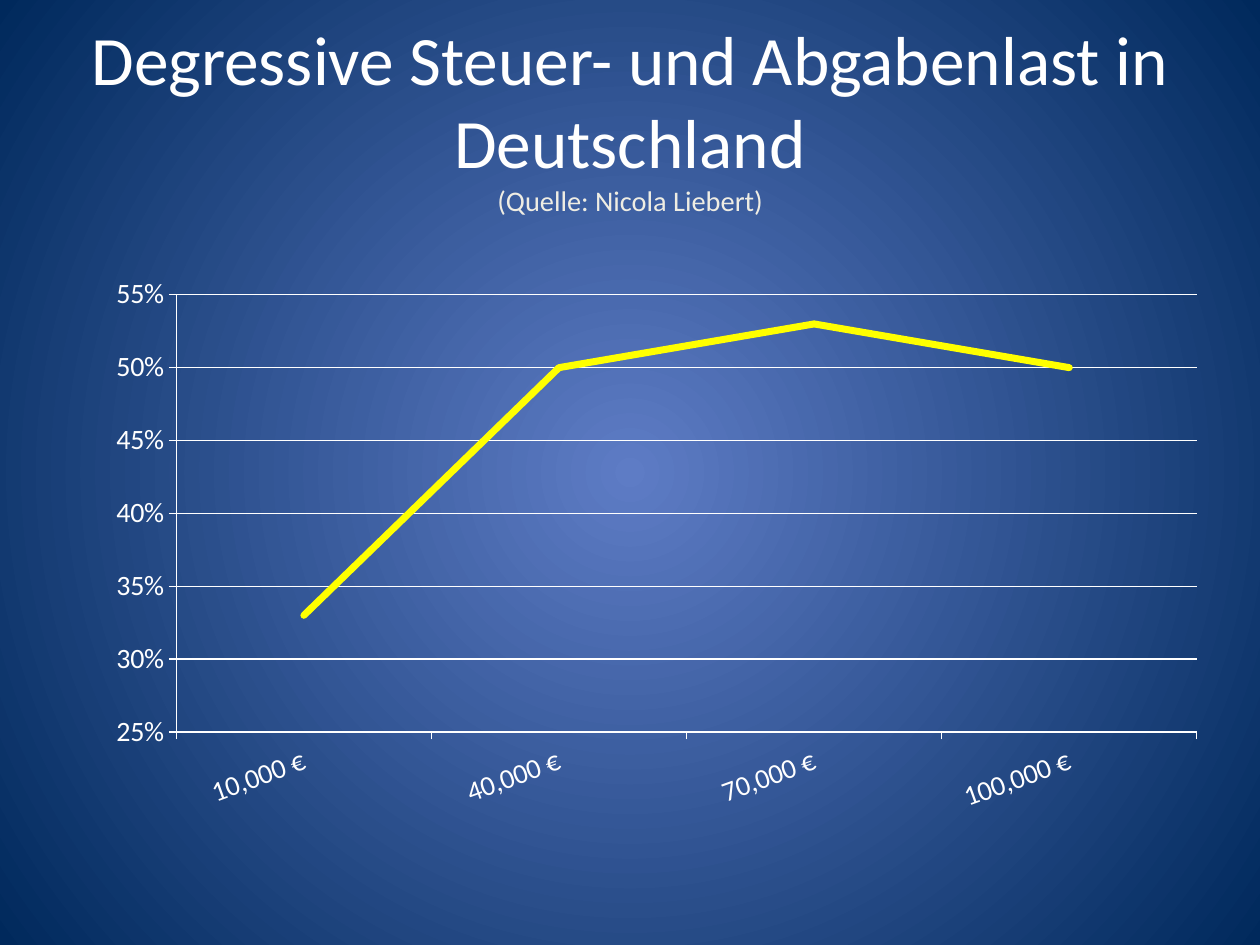
import pptx
import pptx.chart.data
import pptx.dml.color
import pptx.enum.chart
import pptx.enum.text
import pptx.oxml
import pptx.oxml.ns
import pptx.util
from dataclasses import dataclass
from typing import Any

Inches = pptx.util.Inches
Pt = pptx.util.Pt

HUES = {
    "white": "FFFFFF",
    "cream": "EFEDE3",
    "line": "FFFF00",
    "core": "5E7CC5",
    "edge": "00295C",
}
FACE = "Calibri"


@dataclass
class Part:
    text: str
    size: float
    hue: str


@dataclass
class Point:
    wage: int
    load: float


PARTS = [
    Part("Degressive Steuer- und Abgabenlast in Deutschland", 39.6, "white"),
    Part("(Quelle: Nicola Liebert)", 16.2, "cream"),
]
POINTS = [
    Point(10000, 0.33),
    Point(40000, 0.5),
    Point(70000, 0.53),
    Point(100000, 0.5),
]
WIDE, HIGH = 9.21, 4.72
PLOT = {"x": 0.89 / WIDE, "y": 0.24 / HIGH, "w": 8.1 / WIDE, "h": 3.47 / HIGH}


def tint(name: str) -> pptx.dml.color.RGBColor:
    return pptx.dml.color.RGBColor.from_string(HUES[name])


def set_font(font: Any, size: float, hue: str) -> None:
    font.name = FACE
    font.size = Pt(size)
    font.color.rgb = tint(hue)


def set_line(form: Any, hue: str, width: float) -> None:
    form.line.color.rgb = tint(hue)
    form.line.width = Pt(width)


def paint_back(slide: Any) -> None:
    fill = slide.background.fill
    fill.gradient()
    for stop, hue in zip(fill.gradient_stops, ("core", "edge")):
        stop.color.rgb = tint(hue)
    grad = slide.background._cSld.find(".//" + pptx.oxml.ns.qn("a:gradFill"))
    grad.remove(grad.find(pptx.oxml.ns.qn("a:lin")))
    grad.append(pptx.oxml.parse_xml(
        f'<a:path {pptx.oxml.ns.nsdecls("a")} path="circle">'
        '<a:fillToRect l="50000" t="50000" r="50000" b="50000"/></a:path>'))


def add_title(slide: Any, parts: list[Part]) -> None:
    title = slide.shapes.title
    title.left, title.top = Inches(0.5), Inches(0.3)
    title.width, title.height = Inches(9), Inches(1.25)
    frame = title.text_frame
    frame.auto_size = pptx.enum.text.MSO_AUTO_SIZE.NONE
    frame.vertical_anchor = pptx.enum.text.MSO_ANCHOR.MIDDLE
    para = frame.paragraphs[0]
    para.alignment = pptx.enum.text.PP_ALIGN.CENTER
    for rank, part in enumerate(parts):
        if rank:
            para.add_line_break()
        run = para.add_run()
        run.text = part.text
        set_font(run.font, part.size, part.hue)


def place_plot(chart: Any) -> None:
    area = chart._chartSpace.chart.plotArea
    for old in area.findall(pptx.oxml.ns.qn("c:layout")):
        area.remove(old)
    modes = '<c:xMode val="edge"/><c:yMode val="edge"/>'
    sides = "".join(f'<c:{key} val="{val}"/>' for key, val in PLOT.items())
    area.insert(0, pptx.oxml.parse_xml(
        f'<c:layout {pptx.oxml.ns.nsdecls("c")}><c:manualLayout>'
        f'<c:layoutTarget val="inner"/>{modes}{sides}'
        '</c:manualLayout></c:layout>'))


def style_axis(axis: Any) -> None:
    axis.major_tick_mark = pptx.enum.chart.XL_TICK_MARK.OUTSIDE
    axis.minor_tick_mark = pptx.enum.chart.XL_TICK_MARK.NONE
    set_line(axis.format, "white", 0.75)
    set_font(axis.tick_labels.font, 16, "white")


def add_graph(slide: Any, points: list[Point]) -> None:
    data = pptx.chart.data.CategoryChartData(number_format="0%")
    data.categories = [f"{point.wage:,} €" for point in points]
    data.add_series("Series 1", [point.load for point in points])
    chart = slide.shapes.add_chart(
        pptx.enum.chart.XL_CHART_TYPE.LINE,
        Inches(0.51), Inches(2.1), Inches(WIDE), Inches(HIGH), data).chart
    chart.has_legend = False
    chart.has_title = False
    set_font(chart.font, 16, "white")
    place_plot(chart)

    style_axis(chart.category_axis)
    chart.category_axis.has_major_gridlines = False
    body = chart.category_axis._element.find(".//" + pptx.oxml.ns.qn("a:bodyPr"))
    body.set("rot", str(-20 * 60000))

    axis = chart.value_axis
    style_axis(axis)
    axis.tick_labels.number_format = "0%"
    axis.tick_labels.number_format_is_linked = False
    axis.minimum_scale, axis.maximum_scale, axis.major_unit = 0.25, 0.55, 0.05
    axis.has_major_gridlines = True
    set_line(axis.major_gridlines.format, "white", 0.75)

    chart.plots[0].vary_by_categories = False
    row = chart.plots[0].series[0]
    row.smooth = False
    row.marker.style = pptx.enum.chart.XL_MARKER_STYLE.NONE
    set_line(row.format, "line", 4)
    row.format.line._get_or_add_ln().set("cap", "rnd")


def main() -> None:
    deck = pptx.Presentation()
    deck.slide_width, deck.slide_height = Inches(10), Inches(7.5)
    slide = deck.slides.add_slide(deck.slide_layouts[5])
    paint_back(slide)
    add_title(slide, PARTS)
    add_graph(slide, POINTS)
    deck.save("out.pptx")


if __name__ == "__main__":
    main()
